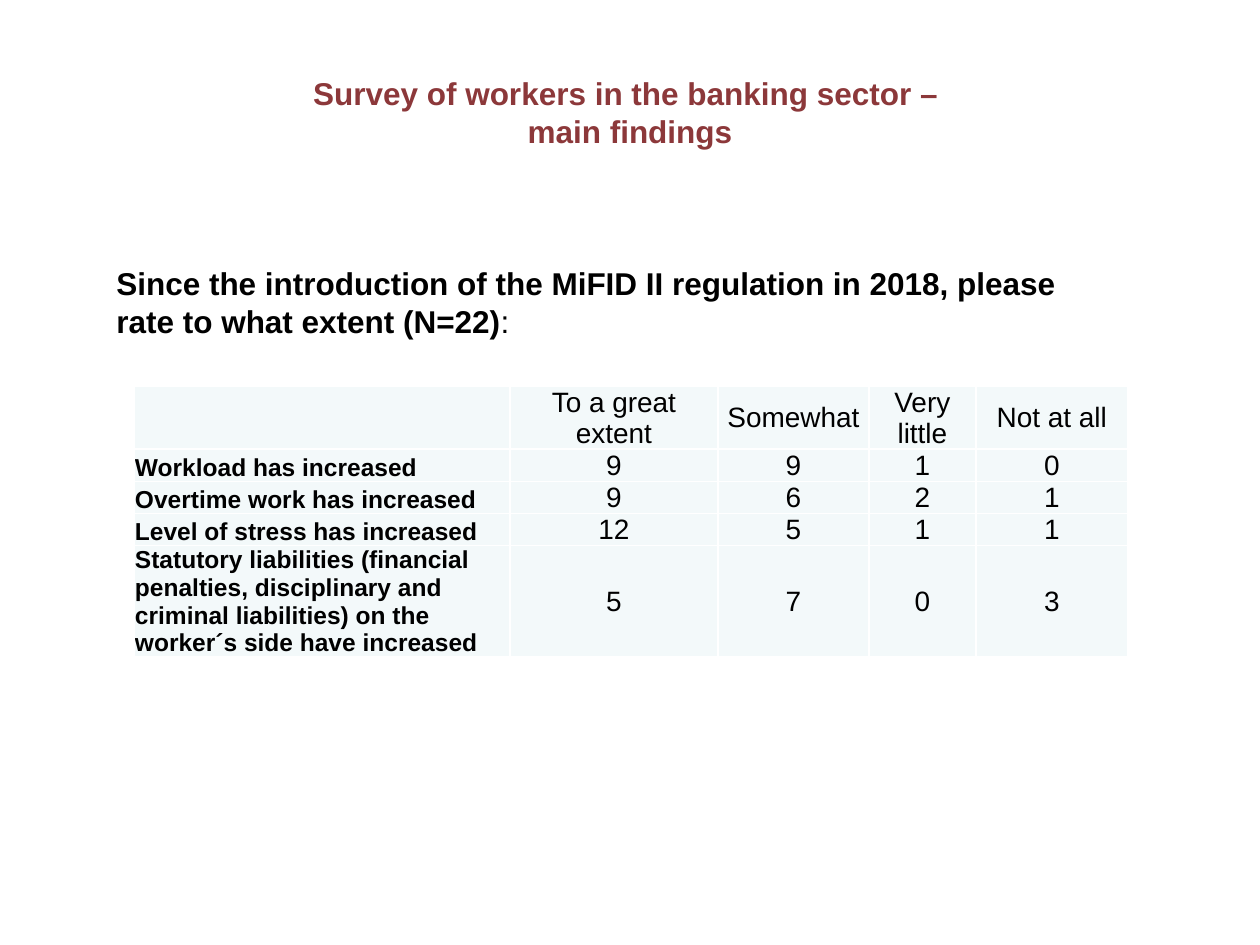
from lxml import etree
from pptx import Presentation
from pptx.dml.color import RGBColor
from pptx.enum import text
from pptx.oxml.ns import qn
from pptx.util import Inches, Pt

PX_PER_INCH = 126
FONT = "Arial"
COLORS = {"title": "8C383A", "text": "000000", "cell": "F3F9FA", "border": "FFFFFF"}
CENTER = text.PP_ALIGN.CENTER
MIDDLE, BOTTOM = text.MSO_ANCHOR.MIDDLE, text.MSO_ANCHOR.BOTTOM

COLUMN_WIDTHS = [376, 208, 151, 107, 152]
ROW_HEIGHTS = [63, 32, 32, 32, 111]
SURVEY = [
    ["", "To a great extent", "Somewhat", "Very little", "Not at all"],
    ["Workload has increased", "9", "9", "1", "0"],
    ["Overtime work has increased", "9", "6", "2", "1"],
    ["Level of stress has increased", "12", "5", "1", "1"],
    ["Statutory liabilities (financial penalties, disciplinary and criminal "
     "liabilities) on the worker´s side have increased", "5", "7", "0", "3"],
]


def px(length):
    return Inches(length / PX_PER_INCH)


def add_run(paragraph, words, size, color="text", bold=False):
    run = paragraph.add_run()
    run.text = words
    run.font.name = FONT
    run.font.size = Pt(size)
    run.font.bold = bold
    run.font.color.rgb = RGBColor.from_string(COLORS[color])


def place_title(slide, left, top, width, height):
    title = slide.shapes.title
    title.left, title.top, title.width, title.height = map(px, (left, top, width, height))
    title.text_frame.vertical_anchor = MIDDLE
    paragraph = title.text_frame.paragraphs[0]
    paragraph.alignment = CENTER
    add_run(paragraph, "Survey of workers in the banking sector – ", 18, "title", True)
    paragraph.add_line_break()
    add_run(paragraph, "main findings", 18, "title", True)


def add_question(slide, left, top, width, height):
    box = slide.shapes.add_textbox(*map(px, (left, top, width, height)))
    box.text_frame.word_wrap = True
    paragraph = box.text_frame.paragraphs[0]
    add_run(paragraph, "Since the introduction of the MiFID II regulation in 2018, "
            "please rate to what extent (N=22)", 18, bold=True)
    add_run(paragraph, ":", 18)


def add_borders(cell):
    properties = cell._tc.get_or_add_tcPr()
    for side in ("lnL", "lnR", "lnT", "lnB"):
        line = etree.SubElement(properties, qn(f"a:{side}"), w=str(Pt(1)))
        fill = etree.SubElement(line, qn("a:solidFill"))
        etree.SubElement(fill, qn("a:srgbClr"), val=COLORS["border"])


def format_cell(cell, words, is_label, anchor):
    cell.margin_left = cell.margin_right = cell.margin_top = px(1)
    cell.margin_bottom = 0
    cell.vertical_anchor = anchor
    add_borders(cell)
    cell.fill.solid()
    cell.fill.fore_color.rgb = RGBColor.from_string(COLORS["cell"])
    if words:
        paragraph = cell.text_frame.paragraphs[0]
        paragraph.alignment = text.PP_ALIGN.LEFT if is_label else CENTER
        add_run(paragraph, words, 14 if is_label else 16, bold=is_label)


def add_survey_table(slide, left, top):
    frame = slide.shapes.add_table(
        len(SURVEY), len(COLUMN_WIDTHS), px(left), px(top),
        px(sum(COLUMN_WIDTHS)), px(sum(ROW_HEIGHTS)))
    table = frame.table
    for column, width in zip(table.columns, COLUMN_WIDTHS):
        column.width = px(width)
    for row, height in zip(table.rows, ROW_HEIGHTS):
        row.height = px(height)
    last = len(SURVEY) - 1
    for i, values in enumerate(SURVEY):
        for j, words in enumerate(values):
            # Header and tall last row are centred, all labels sit at the bottom
            anchor = MIDDLE if i == 0 or (i == last and j > 0) else BOTTOM
            format_cell(table.cell(i, j), words, j == 0, anchor)


def main():
    presentation = Presentation()
    presentation.slide_width, presentation.slide_height = px(1260), px(945)
    slide = presentation.slides.add_slide(presentation.slide_layouts[5])

    # Heading, survey question and answers
    place_title(slide, 63, 57, 1134, 110)
    add_survey_table(slide, 134, 386)
    add_question(slide, 104, 258, 983, 89)

    presentation.save("out.pptx")


if __name__ == "__main__":
    main()
